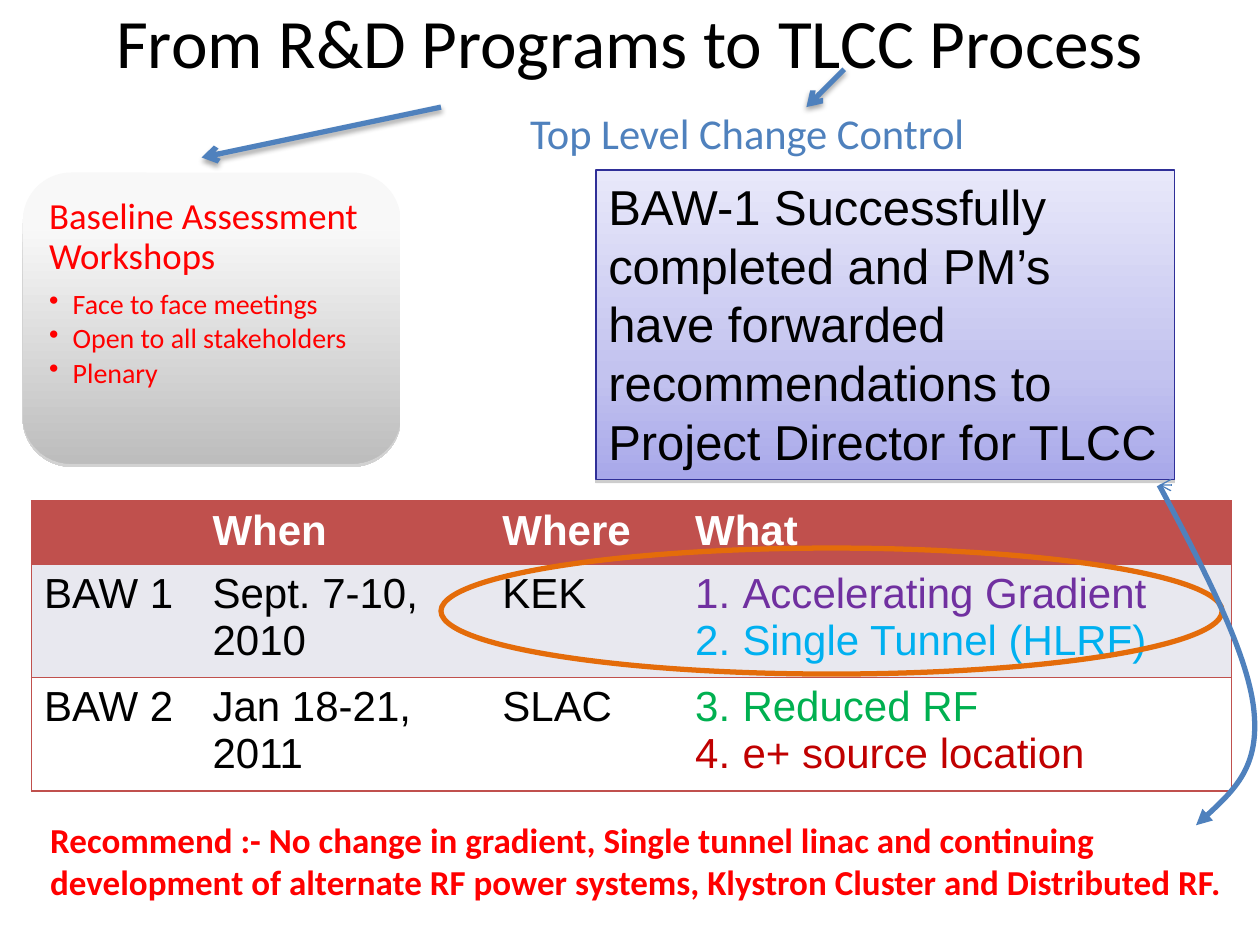
"""Build the slide on moving from R&D programs to the TLCC process."""
from lxml import etree
from pptx import Presentation
from pptx.dml.color import RGBColor
from pptx.enum.shapes import MSO_CONNECTOR, MSO_SHAPE
from pptx.enum.text import MSO_ANCHOR, PP_ALIGN
from pptx.oxml.ns import qn
from pptx.util import Pt

STRAIGHT = MSO_CONNECTOR.STRAIGHT
ROUNDED, OVAL, RECTANGLE = MSO_SHAPE.ROUNDED_RECTANGLE, MSO_SHAPE.OVAL, MSO_SHAPE.RECTANGLE
MIDDLE, TOP = MSO_ANCHOR.MIDDLE, MSO_ANCHOR.TOP
CENTER, LEFT = PP_ALIGN.CENTER, PP_ALIGN.LEFT
BLACK, WHITE = RGBColor(0, 0, 0), RGBColor(255, 255, 255)
RED, BLUE = RGBColor(0xFF, 0, 0), RGBColor(0x4F, 0x81, 0xBD)
THIN_BLUE, NAVY = RGBColor(0x4B, 0x7E, 0xBC), RGBColor(0x2F, 0x2F, 0x98)
ORANGE, BRICK = RGBColor(0xE4, 0x6C, 0x0A), RGBColor(0xC0, 0x50, 0x4D)
BAND, GRAY = RGBColor(0xE8, 0xE8, 0xEF), RGBColor(0x80, 0x80, 0x80)
PURPLE, SKY = RGBColor(0x70, 0x30, 0xA0), RGBColor(0, 0xB0, 0xF0)
GREEN, DARK_RED = RGBColor(0, 0xB0, 0x50), RGBColor(0xC0, 0, 0)
SILVER_STOPS = [(0, RGBColor(0xF8, 0xF8, 0xF8)), (20, RGBColor(0xF7, 0xF7, 0xF7)),
                (100, RGBColor(0xBD, 0xBD, 0xBD))]
LILAC_STOPS = [(0, RGBColor(0xE8, 0xE8, 0xFA)), (65, RGBColor(0xC3, 0xC3, 0xEF)),
               (100, RGBColor(0xA8, 0xA8, 0xEA))]
NO_STYLE = "{2D5ABB26-0587-4C30-8999-92F81FD0307C}"


def add_run(paragraph, text, size, color, font="Calibri", bold=False):
    run = paragraph.add_run()
    run.text = text
    run.font.size = Pt(size)
    run.font.name = font
    run.font.bold = bold
    run.font.color.rgb = color


def add_child(parent, tag, **attributes):
    return etree.SubElement(parent, qn(tag), {key: str(value) for key, value in attributes.items()})


presentation = Presentation()
presentation.slide_width, presentation.slide_height = Pt(720), Pt(540)
slide = presentation.slides.add_slide(presentation.slide_layouts[6])
shapes = slide.shapes

title = shapes.add_textbox(Pt(36), Pt(21.6), Pt(648), Pt(46.8)).text_frame
title.word_wrap = True
title.vertical_anchor = MIDDLE
heading = title.paragraphs[0]
add_run(heading, "From R&D Programs to TLCC Process", 39.6, BLACK)
subheading = title.add_paragraph()
subheading.space_before = Pt(14)
subheading._p.get_or_add_pPr().set("marL", str(Pt(134)))
add_run(subheading, "Top Level Change Control", 24.3, BLUE)
heading.alignment = subheading.alignment = CENTER

COLUMN_WIDTHS = [96.3, 165.6, 110.2, 313.6]
ROW_HEIGHTS = [34, 61, 61]
ROWS = [
    (BRICK, WHITE, ["", "When", "Where", "What"], []),
    (BAND, BLACK, ["BAW 1", "Sept. 7-10, 2010", "KEK"],
     [("Accelerating Gradient", PURPLE), ("Single Tunnel (HLRF)", SKY)]),
    (WHITE, BLACK, ["BAW 2", "Jan 18-21, 2011", "SLAC"],
     [("Reduced RF", GREEN), ("e+ source location", DARK_RED)]),
]
table_frame = shapes.add_table(3, 4, Pt(18), Pt(286.3), Pt(sum(COLUMN_WIDTHS)), Pt(sum(ROW_HEIGHTS)))
table = table_frame.table
table._tbl.tblPr.find(qn("a:tableStyleId")).text = NO_STYLE
for column, width in zip(table.columns, COLUMN_WIDTHS):
    column.width = Pt(width)
for row_index, (fill, color, texts, topics) in enumerate(ROWS):
    table.rows[row_index].height = Pt(ROW_HEIGHTS[row_index])
    for column_index in range(4):
        cell = table.cell(row_index, column_index)
        sides = {0: ["lnL"], 3: ["lnR"]}.get(column_index, []) + ["lnT", "lnB"]
        for side in sides:
            border = add_child(cell._tc.get_or_add_tcPr(), f"a:{side}", w=Pt(1))
            add_child(add_child(border, "a:solidFill"), "a:srgbClr", val=BRICK)
        cell.fill.solid()
        cell.fill.fore_color.rgb = fill
        if column_index < len(texts) and texts[column_index]:
            add_run(cell.text_frame.paragraphs[0], texts[column_index], 24, color, "Arial", row_index == 0)
    for topic_index, (topic, topic_color) in enumerate(topics):
        frame = cell.text_frame
        paragraph = frame.add_paragraph() if topic_index else frame.paragraphs[0]
        properties = paragraph._p.get_or_add_pPr()
        properties.set("marL", str(Pt(27)))
        properties.set("indent", str(Pt(-27)))
        add_child(properties, "a:buAutoNum", type="arabicPeriod", startAt=2 * row_index - 1)
        add_run(paragraph, topic, 24, topic_color, "Arial")

workshop_panel = shapes.add_shape(ROUNDED, Pt(13), Pt(98.6), Pt(216), Pt(166.3))
workshop_panel.line.fill.background()

workshops = shapes.add_textbox(Pt(21.6), Pt(106.6), Pt(199.4), Pt(150.5)).text_frame
workshops.word_wrap = True
workshops.margin_left = workshops.margin_right = Pt(6.5)
workshops.margin_top = workshops.margin_bottom = Pt(6.5)
paragraph = workshops.paragraphs[0]
paragraph.line_spacing = 0.9
paragraph.space_after = Pt(7.35)
add_run(paragraph, "Baseline Assessment Workshops", 21, RED)
for feature in ["Face to face meetings", "Open to all stakeholders", "Plenary"]:
    paragraph = workshops.add_paragraph()
    paragraph.level = 1
    paragraph.line_spacing = 0.9
    paragraph.space_after = Pt(2.4)
    properties = paragraph._p.get_or_add_pPr()
    properties.set("marL", str(Pt(13.5)))
    properties.set("indent", str(Pt(-13.5)))
    add_child(properties, "a:buChar", char="•")
    add_run(paragraph, feature, 16, RED)

highlight = shapes.add_shape(OVAL, Pt(252), Pt(313.2), Pt(446.4), Pt(72))
highlight.shadow.inherit = False
highlight.fill.background()
highlight.line.color.rgb = ORANGE
highlight.line.width = Pt(3)

status_box = shapes.add_shape(RECTANGLE, Pt(340.5), Pt(97.2), Pt(330.5), Pt(177))
status_box.line.color.rgb = NAVY
status_box.line.width = Pt(0.75)
status_box.text_frame.word_wrap = True
status_box.text_frame.vertical_anchor = TOP
paragraph = status_box.text_frame.paragraphs[0]
paragraph.alignment = LEFT
add_run(paragraph, "BAW-1 Successfully completed and PM’s have forwarded recommendations to "
        "Project Director for TLCC", 28, BLACK, "Arial")

for shape, stops in [(workshop_panel, SILVER_STOPS), (status_box, LILAC_STOPS)]:
    shape.fill.gradient()
    shape.fill.gradient_angle = 270
    stop_list = shape._element.spPr.find(".//" + qn("a:gsLst"))
    for stop in list(stop_list):
        stop_list.remove(stop)
    for position, color in stops:
        add_child(add_child(stop_list, "a:gs", pos=position * 1000), "a:srgbClr", val=color)

CURVE_POINTS = [(688, 325), (713, 373), (716.5, 405.5), (720, 438), (702, 455), (683.5, 471.6)]
builder = shapes.build_freeform(Pt(662.4), Pt(277.2))
builder.add_line_segments([(Pt(x), Pt(y)) for x, y in CURVE_POINTS], close=False)
curve = builder.convert_to_shape()
curve.shadow.inherit = False
curve.fill.background()
outline = curve._element.spPr.find(".//" + qn("a:pathLst"))[0]
segments = outline.findall(qn("a:lnTo"))
for start in range(0, len(segments), 3):
    bezier = add_child(outline, "a:cubicBezTo")
    for segment in segments[start:start + 3]:
        bezier.append(segment[0])
        outline.remove(segment)

arrows = [(curve, BLUE, 3, "triangle")]
shadows = [(workshop_panel, GRAY, 35, 0, 1.8), (status_box, GRAY, 38, 0, 1.6)]
for ends, color, width in [((252, 61.2, 115.2, 90), BLUE, 3),
                           ((482.4, 39.6, 460.8, 61.2), BLUE, 3),
                           ((669.6, 277.2, 662.4, 277.2), THIN_BLUE, 0.75)]:
    connector = shapes.add_connector(STRAIGHT, *[Pt(value) for value in ends])
    arrows.append((connector, color, width, "arrow"))
    shadows.append((connector, BLACK, 35 if width == 3 else 0, 3.1, 1.8))

for shape, color, width, head in arrows:
    shape.line.color.rgb = color
    shape.line.width = Pt(width)
    add_child(shape.line._get_or_add_ln(), "a:tailEnd", type=head)

for shape, color, opacity, blur, distance in shadows:
    effects = add_child(shape._element.spPr, "a:effectLst")
    if opacity:
        shadow = add_child(effects, "a:outerShdw", blurRad=Pt(blur), dist=Pt(distance),
                           dir=5400000, rotWithShape=0)
        shadow_color = add_child(shadow, "a:srgbClr", val=color)
        add_child(shadow_color, "a:alpha", val=opacity * 1000)

recommendation = shapes.add_textbox(Pt(21.6), Pt(464.4), Pt(684), Pt(55.4)).text_frame
recommendation.word_wrap = True
add_run(recommendation.paragraphs[0], "Recommend :- No change in gradient, Single tunnel linac and continuing "
        "development of alternate RF power systems, Klystron Cluster and Distributed RF.", 20, RED, bold=True)

presentation.save("out.pptx")
